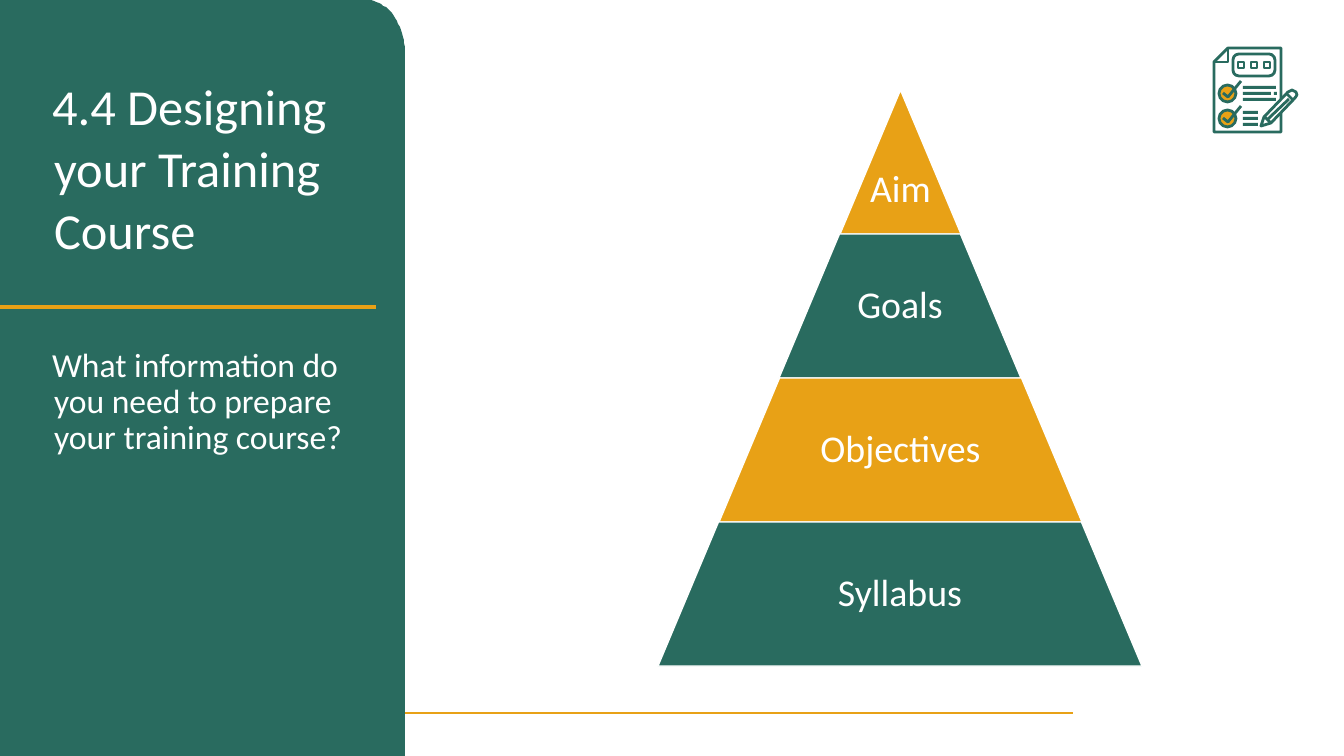
from math import cos, pi, sin

from pptx import Presentation
from pptx.dml.color import RGBColor
from pptx.enum.shapes import MSO_CONNECTOR as Connector, MSO_SHAPE as Shape
from pptx.enum.text import MSO_ANCHOR as Anchor, MSO_AUTO_SIZE as AutoSize, PP_ALIGN as Align
from pptx.oxml.ns import qn
from pptx.util import Emu, Pt
from lxml.etree import SubElement

PX = 914400 / 100.8
GREEN, GOLD, WHITE = "296B5F", "E8A116", "FFFFFF"
TIERS = [("Aim", GOLD), ("Goals", GREEN), ("Objectives", GOLD), ("Syllabus", GREEN)]
TIER_HEIGHT, TIER_GROWTH = 144, 121
APEX_X, APEX_Y = 900, 90
CHECK_GAP = 25
PEN = 2


def px(length):
    """Turn pixels into EMU."""
    return Emu(round(length * PX))


def color(code):
    """Turn a hex string into a colour."""
    return RGBColor.from_string(code)


def paint(shape, fill=None, line=None, weight=PEN):
    """Give a shape a flat fill and outline; None leaves either out."""
    shape.shadow.inherit = False
    if fill:
        shape.fill.solid()
        shape.fill.fore_color.rgb = color(fill)
    else:
        shape.fill.background()
    if line:
        shape.line.color.rgb = color(line)
        shape.line.width = Pt(weight)
    else:
        shape.line.fill.background()
    return shape


def add_preset(canvas, kind, left, top, width, height, **look):
    """Add a painted preset shape."""
    shape = canvas.add_shape(kind, px(left), px(top), px(width), px(height))
    return paint(shape, **look)


def add_outline(canvas, points, close=True, **look):
    """Add a painted freeform through the points."""
    builder = canvas.build_freeform(*points[0], scale=PX)
    builder.add_line_segments(points[1:], close=close)
    return paint(builder.convert_to_shape(), **look)


def add_line(canvas, start, end, code, weight):
    """Add a straight line without a shadow."""
    line = canvas.add_connector(Connector.STRAIGHT, *map(px, start + end))
    line.line.color.rgb = color(code)
    line.line.width = Pt(weight)
    SubElement(line.element.spPr, qn("a:effectLst"))


def write(paragraph, text, size, spacing, align):
    """Write one white paragraph."""
    paragraph.text = text
    paragraph.alignment = align
    paragraph.line_spacing = spacing
    paragraph.space_before = Pt(0)
    paragraph.font.name = "Calibri"
    paragraph.font.size = Pt(size)
    paragraph.font.color.rgb = color(WHITE)


def fill_placeholder(page, holder, place, text, size, spacing):
    """Move a placeholder to the front and write its text."""
    holder.left, holder.top, holder.width, holder.height = map(px, place)
    page.shapes.element.append(holder.element)
    frame = holder.text_frame
    frame.word_wrap = True
    frame.auto_size = AutoSize.NONE
    frame.vertical_anchor = Anchor.TOP
    paragraph = frame.paragraphs[0]
    properties = paragraph._p.get_or_add_pPr()
    properties.set("marL", str(px(2)))
    properties.set("indent", str(px(-2)))
    SubElement(properties, qn("a:buNone"))
    write(paragraph, text, size, spacing, Align.LEFT)


def add_panel(page):
    """Draw the side panel with its rounded corner and the gold rules."""
    add_line(page.shapes, (0, 713), (1073, 713), GOLD, 1.5)
    angles = [step * pi / 48 for step in range(25)]
    corner = [(366 + 39 * sin(angle), 54 - 54 * cos(angle)) for angle in angles]
    add_outline(page.shapes, [(0, 0), *corner, (405, 756), (0, 756)], fill=GREEN)
    add_line(page.shapes, (0, 307), (376, 307), GOLD, 2.75)


def add_tier(page, number, label, code):
    """Draw one tier of the pyramid, counted from the apex."""
    width = TIER_GROWTH * number
    top = APEX_Y + TIER_HEIGHT * (number - 1)
    tier = add_preset(page.shapes, Shape.TRAPEZOID, APEX_X - width // 2, top, width,
                      TIER_HEIGHT, fill=code, line=WHITE, weight=1)
    tier.adjustments[0] = TIER_GROWTH / 2 / min(width, TIER_HEIGHT)
    frame = tier.text_frame
    frame.word_wrap = False
    frame.vertical_anchor = Anchor.MIDDLE
    frame.margin_left = frame.margin_right = 0
    frame.margin_top = px(8 if number == 1 else 0)
    frame.margin_bottom = px(0 if number == 1 else TIER_HEIGHT // 3 // number)
    write(frame.paragraphs[0], label, 27, 0.9, Align.CENTER)


def add_pencil(canvas):
    """Draw the pencil of the checklist icon."""
    barrel = [(1261, 126), (1264, 117), (1288, 92), (1292, 90), (1296, 92),
              (1297, 95), (1295, 98), (1271, 123)]
    add_outline(canvas, barrel, fill=WHITE, line=GREEN)
    for start, end in [((1267, 120), (1289, 99)), ((1287, 94), (1293, 100)),
                       ((1265, 117), (1271, 123))]:
        add_line(canvas, start, end, GREEN, PEN)


def add_checklist(page):
    """Draw the checklist icon."""
    canvas = page.shapes.add_group_shape().shapes
    sheet = [(1214, 62), (1228, 48), (1281, 48), (1281, 132), (1214, 132)]
    add_outline(canvas, sheet, line=GREEN)
    add_outline(canvas, [(1214, 62), (1228, 62), (1228, 48)], close=False, line=GREEN)
    frame = add_preset(canvas, Shape.ROUNDED_RECTANGLE, 1233, 54, 42, 22, line=GREEN)
    frame.adjustments[0] = 0.27
    for column in range(3):
        add_preset(canvas, Shape.RECTANGLE, 1238 + 13 * column, 62, 6, 6, line=GREEN)
    for row in range(2):
        drop = CHECK_GAP * row
        add_preset(canvas, Shape.OVAL, 1219, 85 + drop, 17, 17, fill=GOLD, line=GREEN)
        tick = [(1223, 93 + drop), (1228, 97 + drop), (1241, 81 + drop)]
        add_outline(canvas, tick, close=False, line=GREEN)
        for bar, width in enumerate([(33, 28, 33), (15, 15, 15)][row]):
            add_preset(canvas, Shape.RECTANGLE, 1243, 86 + drop + 6 * bar, width, 3,
                       fill=GREEN)
    add_preset(canvas, Shape.RECTANGLE, 1274, 92, 3, 3, fill=GREEN)
    add_pencil(canvas)


def main():
    """Build the slide and save it."""
    deck = Presentation()
    deck.slide_width, deck.slide_height = px(1344), px(756)
    page = deck.slides.add_slide(deck.slide_layouts[1])
    add_panel(page)
    fill_placeholder(page, page.shapes.title, (42, 68, 309, 156),
                     "4.4 Designing your Training Course", 36, 1.03)
    fill_placeholder(page, page.placeholders[1], (42, 343, 324, 378),
                     "What information do you need to prepare your training course?", 24, 0.9)
    for number, (label, code) in enumerate(TIERS, 1):
        add_tier(page, number, label, code)
    add_checklist(page)
    deck.save("out.pptx")


if __name__ == "__main__":
    main()
